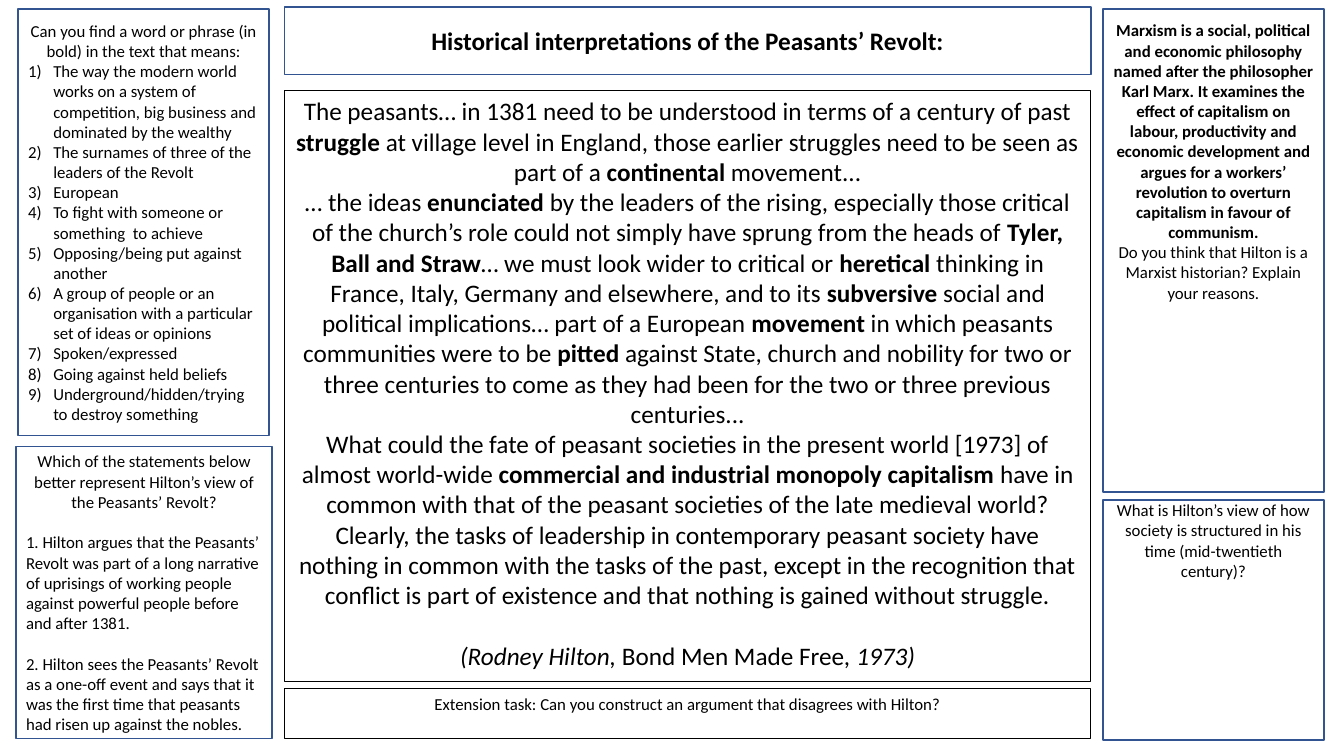
from lxml.etree import SubElement
from pptx import Presentation
from pptx.dml.color import RGBColor
from pptx.enum.shapes import MSO_SHAPE as Preset
from pptx.enum.text import MSO_ANCHOR as Anchor, PP_ALIGN as Align
from pptx.oxml.ns import qn
from pptx.util import Inches, Pt

BLACK = RGBColor(0x00, 0x00, 0x00)
WHITE = RGBColor(0xFF, 0xFF, 0xFF)
BLUE = RGBColor(0x32, 0x54, 0x91)
FONT = "Calibri"
SMALL_GAP, LARGE_GAP = 14.65, 21.97

TITLE = "*Historical interpretations of the Peasants’ Revolt:*"
PASSAGE = [
    "The peasants… in 1381 need to be understood in terms of a century of past *struggle* at village level "
    "in England, those earlier struggles need to be seen as part of a *continental* movement...",
    "… the ideas *enunciated *by the leaders of the rising, especially those critical of the church’s role "
    "could not simply have sprung from the heads of *Tyler, Ball and Straw*… we must look wider to critical "
    "or *heretical* thinking in France, Italy, Germany and elsewhere, and to its *subversive* social and "
    "political implications… part of a European *movement* in which peasants communities were to be "
    "*pitted *against State, church and nobility for two or three centuries to come as they had been for "
    "the two or three previous centuries...",
    "What could the fate of peasant societies in the present world [1973] of almost world-wide *commercial "
    "and industrial monopoly capitalism *have in common with that of the peasant societies of the late "
    "medieval world? Clearly, the tasks of leadership in contemporary peasant society have nothing in common "
    "with the tasks of the past, except in the recognition that conflict is part of existence and that "
    "nothing is gained without struggle.",
]
CITATION = "*(Rodney Hilton, *Bond Men Made Free*, 1973)*"
EXTENSION = "Extension task: Can you construct an argument that disagrees with Hilton?"
WORD_TASK = "Can you find a word or phrase (in bold) in the text that means:"
MEANINGS = [
    "The way the modern world works on a system of competition, big business and dominated by the wealthy",
    "The surnames of three of the leaders of the Revolt",
    "European",
    "To fight with someone or something  to achieve",
    "Opposing/being put against another",
    "A group of people or an organisation with a particular set of ideas or opinions",
    "Spoken/expressed",
    "Going against held beliefs",
    "Underground/hidden/trying to destroy something",
]
VIEW_TASK = "Which of the statements below better represent Hilton’s view of the Peasants’ Revolt?"
STATEMENTS = [
    "1. Hilton argues that the Peasants’ Revolt was part of a long narrative of uprisings of working people "
    "against powerful people before and after 1381.",
    "2. Hilton sees the Peasants’ Revolt as a one-off event and says that it was the first time that "
    "peasants had risen up against the nobles.",
]
MARXISM = [
    "*Marxism is a social, political and economic philosophy named after the philosopher Karl Marx. It "
    "examines the effect of capitalism on labour, productivity and economic development and argues for a "
    "workers’ revolution to overturn capitalism in favour of communism.*",
    "Do you think that Hilton is a Marxist historian? Explain your reasons.",
]
SOCIETY = "What is Hilton’s view of how society is structured in his time (mid-twentieth century)?"

MIDDLE_LEFT, MIDDLE_WIDTH = 2.82, 8
RIGHT_LEFT, RIGHT_WIDTH = 10.94, 2.19


def add_panel(left, top, width, height, line=BLUE, weight=1, anchor=Anchor.MIDDLE, inset=0.05):
    panel = slide.shapes.add_shape(Preset.RECTANGLE, *map(Inches, (left, top, width, height)))
    panel.shadow.inherit = False
    panel.fill.solid()
    panel.fill.fore_color.rgb = WHITE
    panel.line.color.rgb = line
    panel.line.width = Pt(weight)
    frame = panel.text_frame
    frame.word_wrap = True
    frame.vertical_anchor = anchor
    frame.margin_top = Inches(inset)
    return frame


def add_text(frame, text, size=12, align=Align.CENTER, emphasis="bold", before=0, numbered=False):
    first = frame.paragraphs[0]
    paragraph = frame.add_paragraph() if first.runs else first
    paragraph.alignment = align
    paragraph.space_before = Pt(before)
    if numbered:
        props = paragraph._p.get_or_add_pPr()
        props.set("marL", str(Inches(0.25)))
        props.set("indent", str(-Inches(0.25)))
        SubElement(props, qn("a:buFont"), typeface="+mj-lt")
        SubElement(props, qn("a:buAutoNum"), type="arabicParenR")
    for index, part in enumerate(text.split("*")):
        if part:
            run = paragraph.add_run()
            run.text = part
            run.font.name = FONT
            run.font.size = Pt(size)
            run.font.color.rgb = BLACK
            if index % 2:
                setattr(run.font, emphasis, True)


deck = Presentation()
deck.slide_width, deck.slide_height = Inches(13.33), Inches(7.5)
slide = deck.slides.add_slide(deck.slide_layouts[6])

passage = add_panel(MIDDLE_LEFT, 0.9, MIDDLE_WIDTH, 5.86, line=BLACK, weight=0.75, anchor=Anchor.TOP)
for text in PASSAGE:
    add_text(passage, text, size=18)
add_text(passage, CITATION, size=18, emphasis="italic", before=LARGE_GAP)

views = add_panel(0.16, 4.43, 2.54, 2.9)
add_text(views, VIEW_TASK)
for text in STATEMENTS:
    add_text(views, text, align=Align.LEFT, before=SMALL_GAP)

society = add_panel(RIGHT_LEFT, 4.96, RIGHT_WIDTH, 2.38, anchor=Anchor.TOP, inset=0)
add_text(society, SOCIETY)

marxism = add_panel(RIGHT_LEFT, 0.09, RIGHT_WIDTH, 4.79, anchor=Anchor.TOP, inset=0.11)
for text in MARXISM:
    add_text(marxism, text)

words = add_panel(0.18, 0.09, 2.49, 4.23)
add_text(words, WORD_TASK)
for text in MEANINGS:
    add_text(words, text, align=Align.LEFT, numbered=True)

title = add_panel(MIDDLE_LEFT, 0.07, MIDDLE_WIDTH, 0.67)
add_text(title, TITLE, size=18)

extension = add_panel(MIDDLE_LEFT, 6.83, MIDDLE_WIDTH, 0.5, line=BLACK, weight=0.75, anchor=Anchor.TOP)
add_text(extension, EXTENSION)

deck.save("out.pptx")
